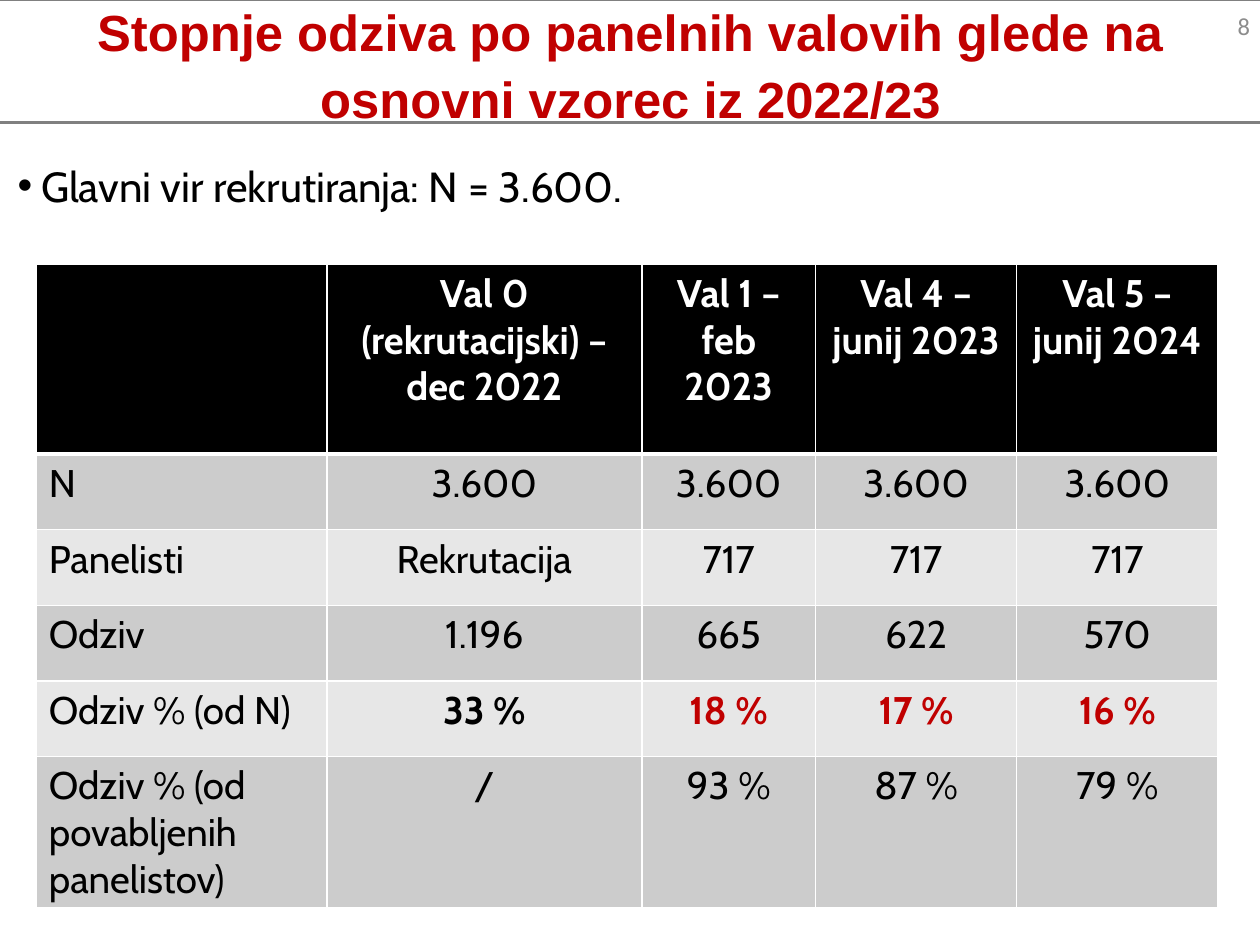
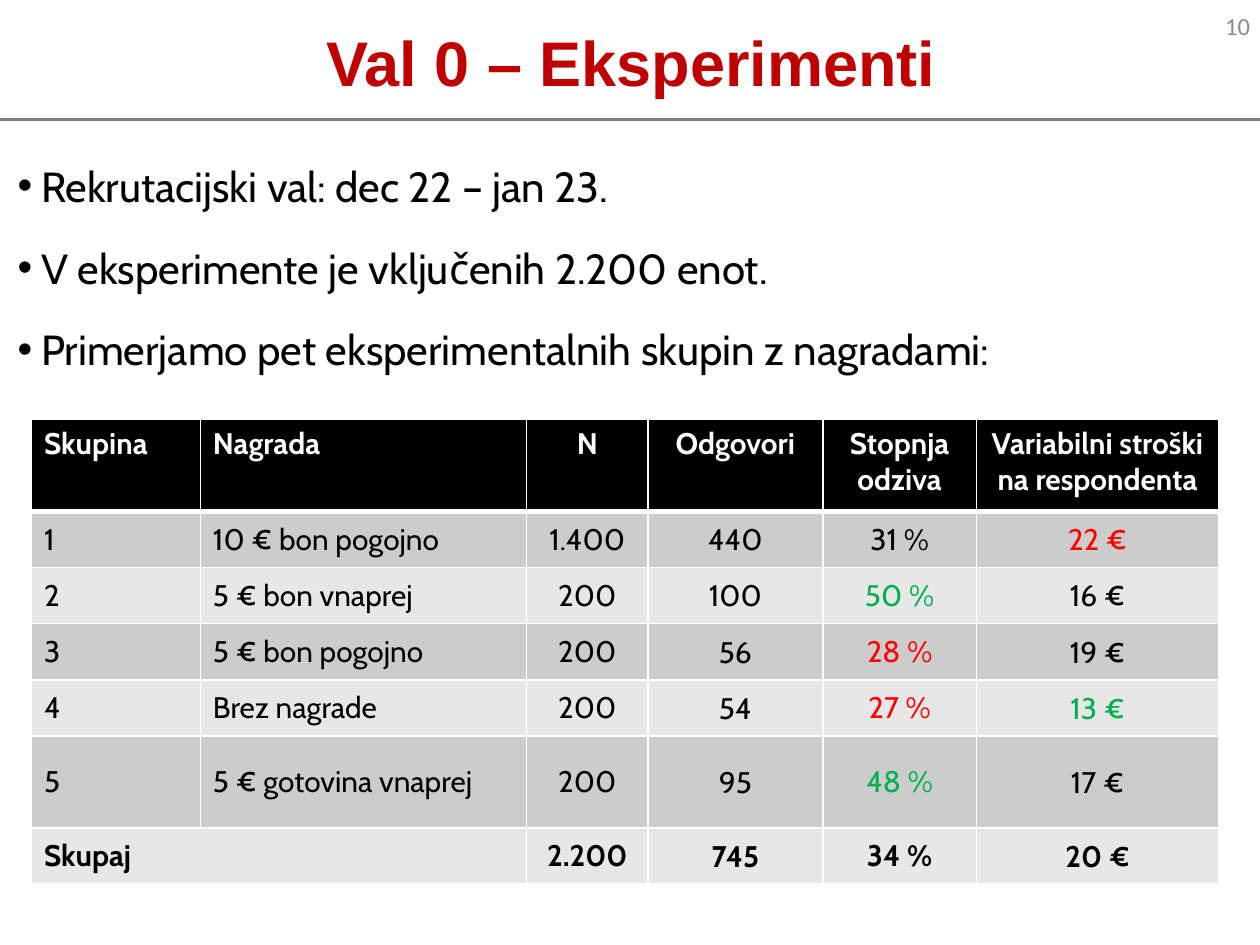
from dataclasses import dataclass, field

import pptx
import pptx.dml.color
import pptx.enum.shapes
import pptx.enum.text
import pptx.oxml.ns
import pptx.slide
import pptx.table
import pptx.text.text
import pptx.util
from lxml import etree

Pt = pptx.util.Pt
ALIGN = pptx.enum.text.PP_ALIGN
ANCHOR = pptx.enum.text.MSO_ANCHOR


# Theme and content types
@dataclass(frozen=True)
class Theme:
    title_font: str = "Arial"
    body_font: str = "Cabin"
    bullet_font: str = "Arial"
    number_font: str = "Calibri"
    black: str = "000000"
    white: str = "FFFFFF"
    title_red: str = "C00000"
    low: str = "FF0000"
    high: str = "00B050"
    rule: str = "808080"
    number: str = "8C8C8C"
    bands: tuple[str, str] = ("CCCCCC", "E7E7E7")
    body_size: float = 24
    number_size: float = 14


THEME = Theme()


@dataclass(frozen=True)
class Cell:
    text: str
    color: str = THEME.black
    bold: bool = False


@dataclass(frozen=True)
class TableSpec:
    left: float
    top: float
    columns: list[float]
    rows: list[float]
    size: float
    header: list[str]
    body: list[list[str | Cell]]
    left_columns: int
    anchor: ANCHOR = ANCHOR.TOP
    tight_columns: set[int] = field(default_factory=set)


@dataclass(frozen=True)
class SlideSpec:
    number: int
    title: str
    title_size: float
    title_top: float
    title_height: float
    bullets: list[str]
    table: TableSpec


# Text
def write_text(frame: pptx.text.text.TextFrame, text: str, *, size: float, font: str,
               color: str, bold: bool = False, align: ALIGN = ALIGN.LEFT,
               anchor: ANCHOR | None = None, inset: float | None = None,
               line_spacing: float | None = None, space_before: float | None = None,
               bullet_indent: float | None = None) -> None:
    """Write each line of the text as a paragraph in one format."""
    frame.word_wrap = True
    if anchor is not None:
        frame.vertical_anchor = anchor
    if inset is not None:
        frame.margin_left = frame.margin_right = Pt(inset)
        frame.margin_top = frame.margin_bottom = Pt(inset)
    for index, line in enumerate(text.split("\n")):
        paragraph = frame.add_paragraph() if index else frame.paragraphs[0]
        paragraph.alignment = align
        if line_spacing is not None:
            paragraph.line_spacing = line_spacing
        if space_before is not None:
            paragraph.space_before = Pt(space_before)
        if bullet_indent is not None:
            properties = paragraph._p.get_or_add_pPr()
            properties.set("marL", str(Pt(bullet_indent)))
            properties.set("indent", str(-Pt(bullet_indent)))
            etree.SubElement(properties, pptx.oxml.ns.qn("a:buFont"),
                             typeface=THEME.bullet_font)
            etree.SubElement(properties, pptx.oxml.ns.qn("a:buChar"), char="•")
        run = paragraph.add_run()
        run.text = line
        run.font.size = Pt(size)
        run.font.name = font
        run.font.bold = bold
        run.font.color.rgb = pptx.dml.color.RGBColor.from_string(color)


def add_text_frame(slide: pptx.slide.Slide, left: float, top: float, width: float,
                   height: float) -> pptx.text.text.TextFrame:
    box = slide.shapes.add_textbox(Pt(left), Pt(top), Pt(width), Pt(height))
    return box.text_frame


# Shared slide parts
def add_title(slide: pptx.slide.Slide, spec: SlideSpec) -> None:
    shape = slide.shapes.add_shape(pptx.enum.shapes.MSO_SHAPE.RECTANGLE, Pt(-2),
                                   Pt(spec.title_top), Pt(725), Pt(spec.title_height))
    shape.shadow.inherit = False
    shape.fill.background()
    shape.line.color.rgb = pptx.dml.color.RGBColor.from_string(THEME.rule)
    shape.line.width = Pt(1.5)
    write_text(shape.text_frame, spec.title, size=spec.title_size, font=THEME.title_font,
               color=THEME.title_red, bold=True, align=ALIGN.CENTER,
               anchor=ANCHOR.MIDDLE, line_spacing=1.1)


def add_bullets(slide: pptx.slide.Slide, bullets: list[str]) -> None:
    write_text(add_text_frame(slide, 10, 91.5, 710, 438.5), "\n".join(bullets),
               size=THEME.body_size, font=THEME.body_font, color=THEME.black,
               inset=0, space_before=18, bullet_indent=13.5)


def add_slide_number(slide: pptx.slide.Slide, number: int) -> None:
    write_text(add_text_frame(slide, 686, 0, 34, 29), str(number),
               size=THEME.number_size, font=THEME.number_font, color=THEME.number,
               align=ALIGN.RIGHT, anchor=ANCHOR.MIDDLE, inset=5.75)


# Table
def set_borders(cell: pptx.table._Cell, top: float, bottom: float) -> None:
    """Borders must precede the fill, so call this before filling the cell."""
    properties = cell._tc.get_or_add_tcPr()
    for side, width in (("L", 1), ("R", 1), ("T", top), ("B", bottom)):
        line = etree.SubElement(properties, pptx.oxml.ns.qn(f"a:ln{side}"), w=str(Pt(width)))
        fill = etree.SubElement(line, pptx.oxml.ns.qn("a:solidFill"))
        etree.SubElement(fill, pptx.oxml.ns.qn("a:srgbClr"), val=THEME.white)


def add_table(slide: pptx.slide.Slide, spec: TableSpec) -> None:
    frame = slide.shapes.add_table(len(spec.rows), len(spec.columns), Pt(spec.left),
                                   Pt(spec.top), Pt(sum(spec.columns)), Pt(sum(spec.rows)))
    table = frame.table
    table.horz_banding = False
    for column, width in zip(table.columns, spec.columns):
        column.width = Pt(width)
    for row, height in zip(table.rows, spec.rows):
        row.height = Pt(height)

    header = [Cell(text, THEME.white, True) for text in spec.header]
    for row_index, contents in enumerate([header, *spec.body]):
        is_header = row_index == 0
        for column_index, content in enumerate(contents):
            content = Cell(content) if isinstance(content, str) else content
            cell = table.cell(row_index, column_index)
            set_borders(cell, top=3 if row_index == 1 else 1, bottom=3 if is_header else 1)
            cell.fill.solid()
            cell.fill.fore_color.rgb = pptx.dml.color.RGBColor.from_string(
                THEME.black if is_header else THEME.bands[(row_index - 1) % 2])
            cell.vertical_anchor = ANCHOR.TOP if is_header else spec.anchor
            if not is_header and column_index in spec.tight_columns:
                cell.margin_left = cell.margin_right = cell.margin_top = Pt(0.75)
                cell.margin_bottom = Pt(0)
            if content.text:
                is_left = column_index < spec.left_columns
                write_text(cell.text_frame, content.text, size=spec.size,
                           font=THEME.body_font, color=content.color, bold=content.bold,
                           align=ALIGN.LEFT if is_left else ALIGN.CENTER)
        # An empty second cell joins the row label
        if not is_header and contents[1] == "":
            table.cell(row_index, 0).merge(table.cell(row_index, 1))


# Slide content
RESPONSE_TABLE = TableSpec(
    left=20.75, top=150.75, size=22,
    columns=[166, 180, 99.25, 115, 115],
    rows=[108.75] + [43.2] * 4 + [86.5],
    left_columns=1,
    header=["", "Val 0 (rekrutacijski) – dec 2022", "Val 1 –\nfeb 2023",
            "Val 4 – junij 2023", "Val 5 – junij 2024"],
    body=[
        ["N"] + ["3.600"] * 4,
        ["Panelisti", "Rekrutacija"] + ["717"] * 3,
        ["Odziv", "1.196", "665", "622", "570"],
        ["Odziv % (od N)", Cell("33 %", bold=True)]
        + [Cell(share, THEME.title_red, True) for share in ("18 %", "17 %", "16 %")],
        ["Odziv % (od povabljenih panelistov)", "/", "93 %", "87 %", "79 %"],
    ],
)

EXPERIMENT_TABLE = TableSpec(
    left=18, top=239.75, size=17,
    columns=[96.5, 186.5, 69.25, 100, 87.75, 138.5],
    rows=[52.5] + [32.1] * 4 + [52.5, 32.1],
    left_columns=2,
    anchor=ANCHOR.MIDDLE, tight_columns={3, 5},
    header=["Skupina", "Nagrada", "N", "Odgovori", "Stopnja odziva",
            "Variabilni stroški na respondenta"],
    body=[
        ["1", "10 € bon pogojno", "1.400", "440", "31 %", Cell("22 €", THEME.low)],
        ["2", "5 € bon vnaprej", "200", "100", Cell("50 %", THEME.high), "16 €"],
        ["3", "5 € bon pogojno", "200", "56", Cell("28 %", THEME.low), "19 €"],
        ["4", "Brez nagrade", "200", "54", Cell("27 %", THEME.low),
         Cell("13 €", THEME.high)],
        ["5", "5 € gotovina vnaprej", "200", "95", Cell("48 %", THEME.high), "17 €"],
        [Cell("Skupaj", bold=True), ""]
        + [Cell(total, bold=True) for total in ("2.200", "745", "34 %", "20 €")],
    ],
)

SLIDES = [
    SlideSpec(8, "Stopnje odziva po panelnih valovih glede na osnovni vzorec iz 2022/23",
              title_size=29, title_top=0, title_height=70,
              bullets=["Glavni vir rekrutiranja: N = 3.600."], table=RESPONSE_TABLE),
    SlideSpec(10, "Val 0 – Eksperimenti",
              title_size=36, title_top=-3, title_height=71.25,
              bullets=["Rekrutacijski val: dec 22 – jan 23.",
                       "V eksperimente je vključenih 2.200 enot.",
                       "Primerjamo pet eksperimentalnih skupin z nagradami:"],
              table=EXPERIMENT_TABLE),
]


def main() -> None:
    presentation = pptx.Presentation()
    presentation.slide_width = Pt(720)
    presentation.slide_height = Pt(540)
    for spec in SLIDES:
        slide = presentation.slides.add_slide(presentation.slide_layouts[6])
        add_title(slide, spec)
        add_bullets(slide, spec.bullets)
        add_slide_number(slide, spec.number)
        add_table(slide, spec.table)
    presentation.save("out.pptx")


if __name__ == "__main__":
    main()
